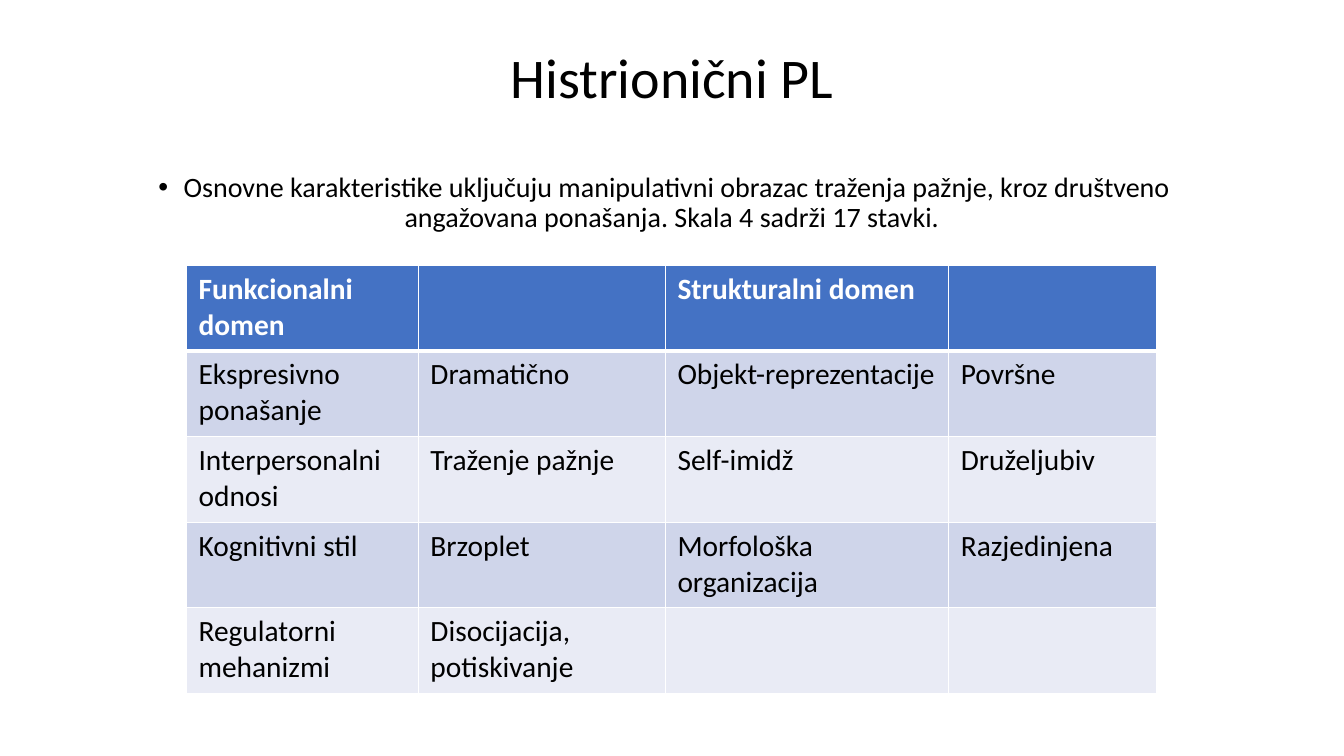
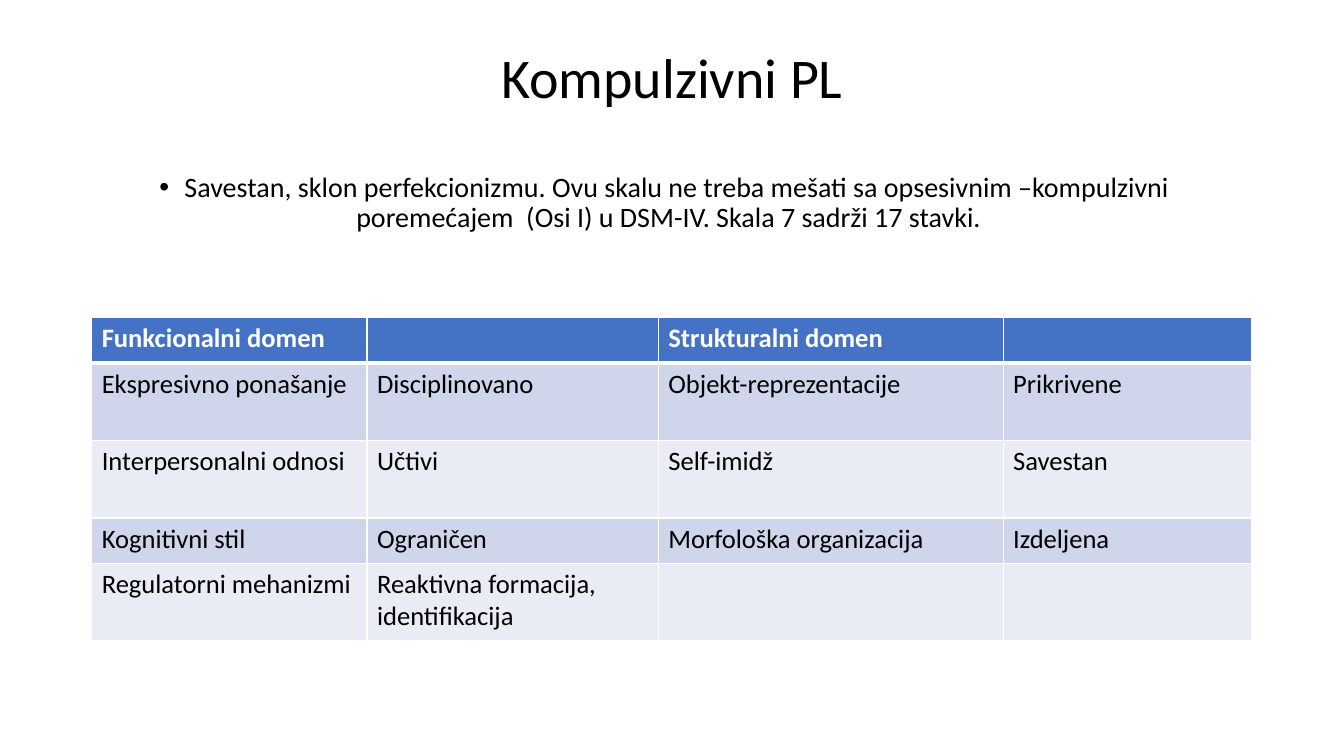
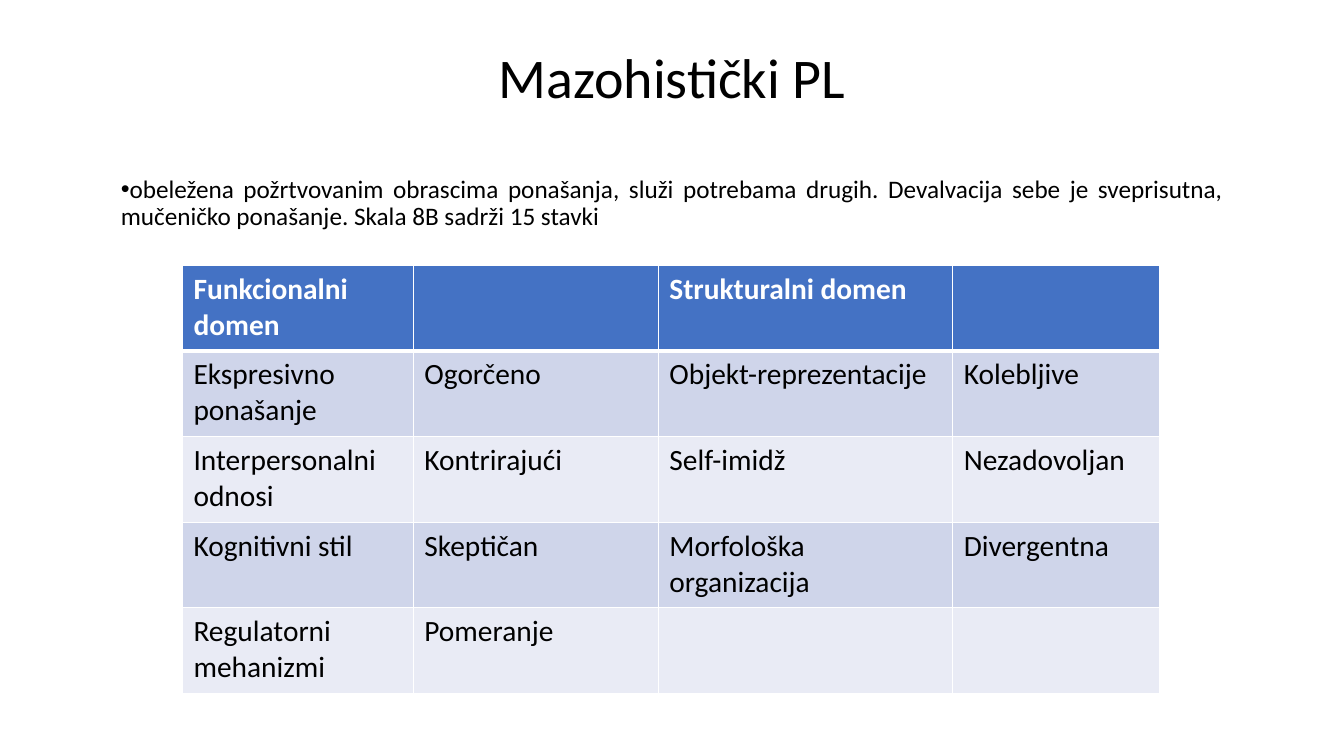
from lxml.etree import SubElement
from pptx import Presentation
from pptx.dml.color import RGBColor
from pptx.enum.text import MSO_ANCHOR, PP_ALIGN
from pptx.oxml.ns import qn
from pptx.util import Inches, Pt

COLORS = {
    "text": "000000",
    "white": "FFFFFF",
    "header": "4472C4",
    "odd": "CFD5EA",
    "even": "E9EBF5",
}
FONT = "Calibri"
HEADINGS = ("Funkcionalni domen", "Strukturalni domen")
FUNCTIONAL = ("Ekspresivno ponašanje", "Interpersonalni odnosi",
              "Kognitivni stil", "Regulatorni mehanizmi")
STRUCTURAL = ("Objekt-reprezentacije", "Self-imidž", "Morfološka organizacija", "")

SLIDES = [
    {
        "title": "Histrionični PL",
        "summary": "Osnovne karakteristike uključuju manipulativni obrazac traženja "
                   "pažnje, kroz društveno angažovana ponašanja. Skala 4 sadrži 17 stavki.",
        "summary_format": {"size": 20, "align": PP_ALIGN.CENTER},
        "functional": ("Dramatično", "Traženje pažnje", "Brzoplet",
                       "Disocijacija, potiskivanje"),
        "structural": ("Površne", "Druželjubiv", "Razjedinjena", ""),
        "table": {"left": 1.85, "top": 2.63, "widths": (2.3, 2.45, 2.81, 2.06),
                  "heights": (0.85,) * 5, "size": 21, "insets": (0.12, 0.06)},
    },
    {
        "title": "Kompulzivni PL",
        "summary": "Savestan, sklon perfekcionizmu. Ovu skalu ne treba mešati sa "
                   "opsesivnim –kompulzivni poremećajem  (Osi I) u DSM-IV. "
                   "Skala 7 sadrži 17 stavki. ",
        "summary_format": {"size": 20, "align": PP_ALIGN.CENTER},
        "functional": ("Disciplinovano", "Učtivi", "Ograničen",
                       "Reaktivna formacija, identifikacija"),
        "structural": ("Prikrivene", "Savestan", "Izdeljena", ""),
        "table": {"left": 0.91, "top": 3.15, "widths": (2.73, 2.89, 3.42, 2.46),
                  "heights": (0.45, 0.77, 0.77, 0.45, 0.77), "size": 19,
                  "insets": (0.1, 0.05)},
    },
    {
        "title": "Mazohistički PL",
        "summary": "obeležena požrtvovanim obrascima ponašanja, služi potrebama drugih. "
                   "Devalvacija sebe je sveprisutna, mučeničko ponašanje. "
                   "Skala 8B sadrži 15 stavki",
        "summary_format": {"size": 18, "align": PP_ALIGN.JUSTIFY},
        "functional": ("Ogorčeno", "Kontrirajući", "Skeptičan", "Pomeranje"),
        "structural": ("Kolebljive", "Nezadovoljan", "Divergentna", ""),
        "table": {"left": 1.81, "top": 2.63, "widths": (2.29, 2.43, 2.92, 2.05),
                  "heights": (0.85,) * 5, "size": 21, "insets": (0.11, 0.06)},
    },
]


def set_all(obj, values):
    for name, value in values.items():
        setattr(obj, name, value)


class Deck:
    def __init__(self):
        self.prs = Presentation()
        set_all(self.prs, {"slide_width": Inches(13.33), "slide_height": Inches(7.5)})
        self.s = None

    def new_slide(self):
        self.s = self.prs.slides.add_slide(self.prs.slide_layouts[6])

    def run(self, p, text, size, color="text", bold=False):
        r = p.add_run()
        r.text = text
        set_all(r.font, {"name": FONT, "size": Pt(size), "bold": bold})
        r.font.color.rgb = RGBColor.from_string(COLORS[color])

    def text(self, text, top, height, size, align):
        sp = self.s.shapes.add_textbox(Inches(1.1), Inches(top),
                                       Inches(11.13), Inches(height))
        tf = sp.text_frame
        set_all(tf, {"word_wrap": True, "vertical_anchor": MSO_ANCHOR.MIDDLE})
        p = tf.paragraphs[0]
        set_all(p, {"alignment": align, "line_spacing": 0.9})
        self.run(p, text, size)
        return p

    def title(self, text):
        self.text(text, 0.19, 1.22, 40, PP_ALIGN.CENTER)

    def summary(self, text, size, align):
        p = self.text(text, 1.6, 0.84, size, align)
        p.space_after = Pt(6)
        ppr = p._p.get_or_add_pPr()
        ppr.set("marL", "0")
        ppr.set("indent", str(-Inches(0.25)))
        SubElement(ppr, qn("a:buFont"), typeface="Arial")
        SubElement(ppr, qn("a:buChar"), char="•")

    def borders(self, cell, row):
        """Draw white cell edges, with a thick rule under the header row."""
        tcpr = cell._tc.get_or_add_tcPr()
        thick = {0: "lnB", 1: "lnT"}.get(row)
        for edge in ("lnL", "lnR", "lnT", "lnB"):
            width = Pt(3 if edge == thick else 1)
            ln = SubElement(tcpr, qn(f"a:{edge}"), w=str(width))
            fill = SubElement(ln, qn("a:solidFill"))
            SubElement(fill, qn("a:srgbClr"), val=COLORS["white"])

    def cell(self, cell, text, row, size, insets):
        x, y = (Inches(v) for v in insets)
        set_all(cell, {"margin_left": x, "margin_right": x,
                       "margin_top": y, "margin_bottom": y})
        self.borders(cell, row)
        fill = "header" if row == 0 else "odd" if row % 2 else "even"
        cell.fill.solid()
        cell.fill.fore_color.rgb = RGBColor.from_string(COLORS[fill])
        if text:
            self.run(cell.text_frame.paragraphs[0], text, size,
                     "text" if row else "white", row == 0)

    def table(self, rows, left, top, widths, heights, size, insets):
        frame = self.s.shapes.add_table(
            len(heights), len(widths), Inches(left), Inches(top),
            Inches(sum(widths)), Inches(sum(heights)))
        table = frame.table
        for column, width in zip(table.columns, widths):
            column.width = Inches(width)
        for row, height in zip(table.rows, heights):
            row.height = Inches(height)
        for i, row in enumerate(rows):
            for j, text in enumerate(row):
                self.cell(table.cell(i, j), text, i, size, insets)


def main():
    deck = Deck()
    for data in SLIDES:
        deck.new_slide()
        deck.title(data["title"])
        deck.summary(data["summary"], **data["summary_format"])
        rows = [(HEADINGS[0], "", HEADINGS[1], "")]
        rows += zip(FUNCTIONAL, data["functional"], STRUCTURAL, data["structural"])
        deck.table(rows, **data["table"])
    deck.prs.save("out.pptx")


if __name__ == "__main__":
    main()
